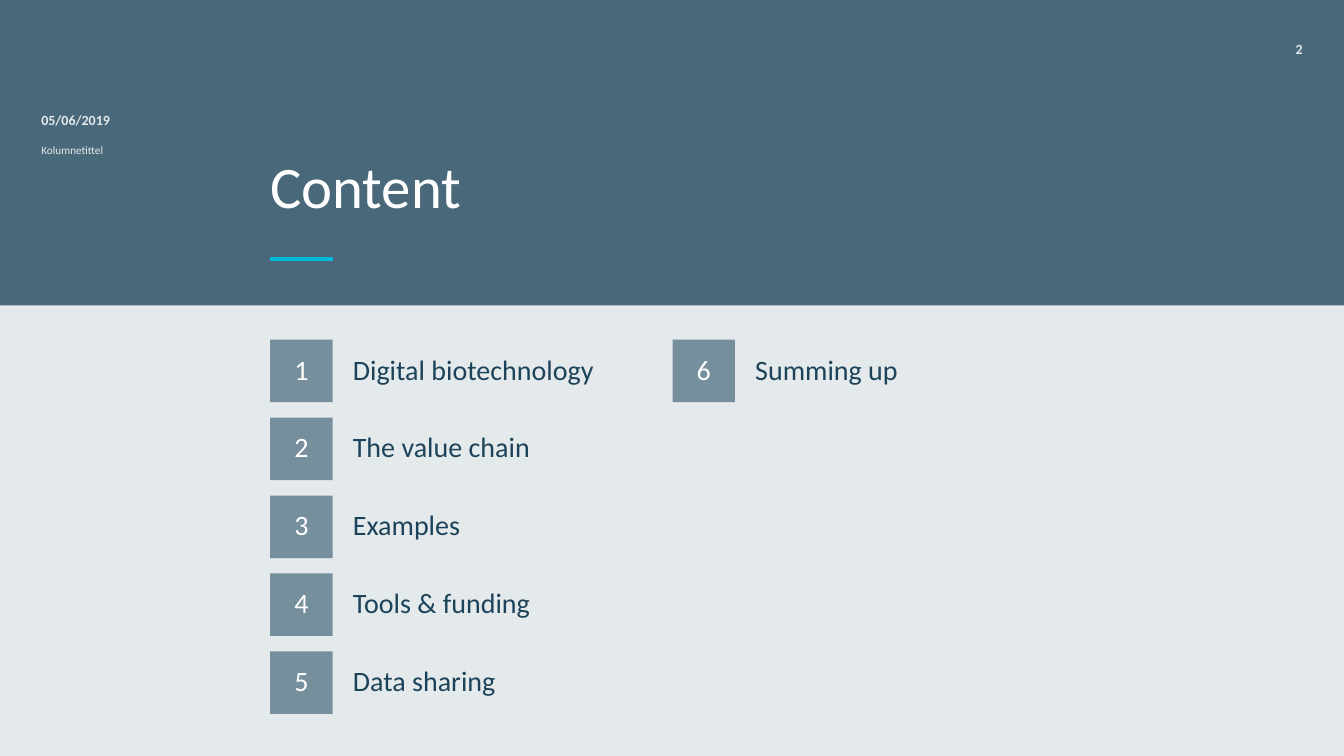
from lxml import etree
from pptx import Presentation
from pptx.dml.color import RGBColor
from pptx.enum.shapes import MSO_CONNECTOR, MSO_SHAPE
from pptx.enum.text import MSO_ANCHOR, PP_ALIGN
from pptx.oxml.ns import qn
from pptx.util import Inches, Pt

RECTANGLE = MSO_SHAPE.RECTANGLE
STRAIGHT = MSO_CONNECTOR.STRAIGHT
TOP, MIDDLE, BOTTOM = MSO_ANCHOR.TOP, MSO_ANCHOR.MIDDLE, MSO_ANCHOR.BOTTOM
LEFT, CENTER, RIGHT = PP_ALIGN.LEFT, PP_ALIGN.CENTER, PP_ALIGN.RIGHT
NAVY, SLATE, PALE, CYAN, WHITE = "1C4359", "768F9C", "E4E9EB", "01B9DC", "FFFFFF"

deck = Presentation()
deck.slide_width, deck.slide_height = Inches(13.33), Inches(7.5)
page = deck.slides.add_slide(deck.slide_layouts[6])


def add_block(left, top, width, height, color):
    block = page.shapes.add_shape(
        RECTANGLE, Inches(left), Inches(top), Inches(width), Inches(height))
    block.shadow.inherit = False
    block.fill.solid()
    block.fill.fore_color.rgb = RGBColor.from_string(color)
    block.line.fill.background()
    return block


def write(box, text, size, color, bold=False, align=LEFT, anchor=TOP,
          inset_left=0, inset_right=0, line_spacing=None):
    frame = box.text_frame
    frame.text = text
    frame.word_wrap = True
    frame.vertical_anchor = anchor
    frame.margin_left, frame.margin_right = Inches(inset_left), Inches(inset_right)
    frame.margin_top = frame.margin_bottom = 0
    para = frame.paragraphs[0]
    para.alignment = align
    para.line_spacing = line_spacing
    font = para.runs[0].font
    font.name, font.size, font.bold = "Calibri", Pt(size), bold
    font.color.rgb = RGBColor.from_string(color)


header = add_block(0, 0, 13.33, 5.8, NAVY)
header_color = header.fill._xPr.find(qn("a:solidFill"))[0]
etree.SubElement(header_color, qn("a:alpha")).set("val", "80000")
add_block(0, 3.03, 13.33, 4.47, PALE)

accent = page.shapes.add_connector(
    STRAIGHT, Inches(2.68), Inches(2.57), Inches(3.3), Inches(2.57))
accent.line.color.rgb = RGBColor.from_string(CYAN)
accent.line.width = Pt(3)
etree.SubElement(accent._element.spPr, qn("a:effectLst"))

title = page.shapes.add_textbox(Inches(2.68), Inches(0.4), Inches(7.97), Inches(1.79))
write(title, "Content", 42, WHITE, anchor=BOTTOM, inset_right=0.39, line_spacing=0.9)

details = [
    ("05/06/2019", 0.41, 1.11, 1.65, 0.23, 10, True, LEFT),
    ("Kolumnetittel", 0.41, 1.42, 2.2, 0.4, 8, False, LEFT),
    ("2", 12.37, 0.4, 0.55, 0.23, 10, True, RIGHT),
]
for text, left, top, width, height, size, bold, align in details:
    box = page.shapes.add_textbox(Inches(left), Inches(top), Inches(width), Inches(height))
    write(box, text, size, PALE, bold, align)

topics = ["Digital biotechnology", "The value chain", "Examples",
          "Tools & funding", "Data sharing", "Summing up"]
rows_per_column = 5
tile = 0.62
for index, topic in enumerate(topics):
    column, row = divmod(index, rows_per_column)
    left = 2.68 + column * 3.99
    top = 3.37 + row * 0.773
    number = add_block(left, top, tile, tile, SLATE)
    write(number, str(index + 1), 20, WHITE, align=CENTER, anchor=MIDDLE, line_spacing=0.9)
    label = page.shapes.add_textbox(
        Inches(left + tile), Inches(top), Inches(3.37), Inches(tile))
    write(label, topic, 20, NAVY, anchor=MIDDLE,
          inset_left=0.2, inset_right=0.28, line_spacing=0.9)

deck.save("out.pptx")
